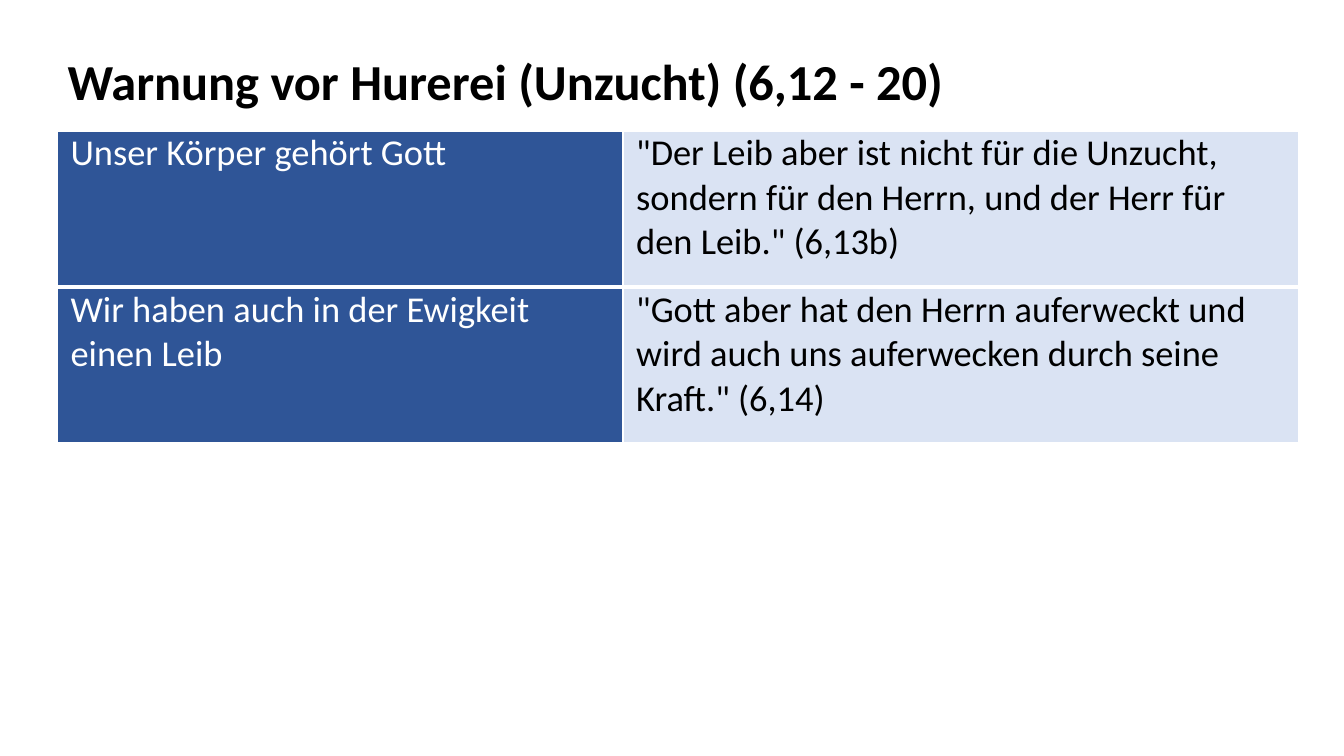
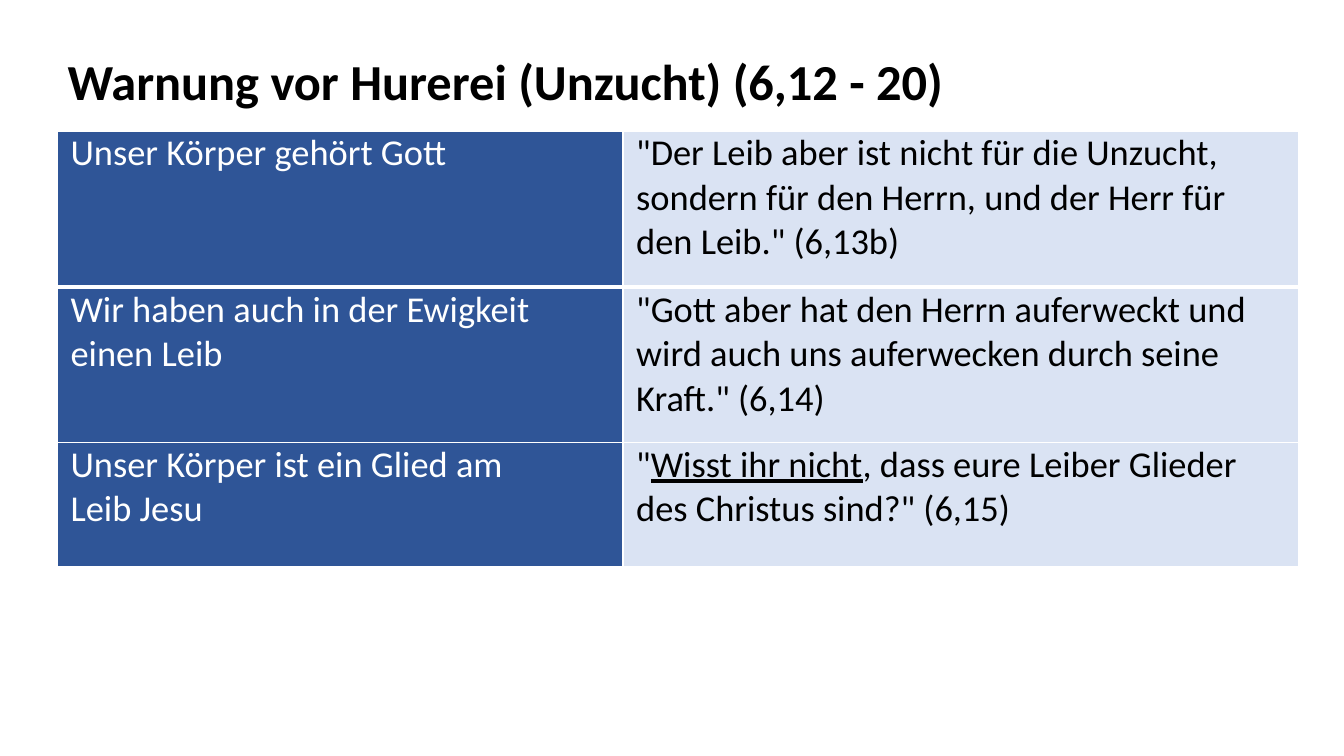
from lxml import etree
from pptx import Presentation
from pptx.dml.color import RGBColor
from pptx.enum.text import MSO_ANCHOR, MSO_AUTO_SIZE, PP_ALIGN
from pptx.oxml.ns import qn
from pptx.util import Inches, Pt

FONT = "Calibri"
BLACK, WHITE, DARK_BLUE, PALE_BLUE = "000000", "FFFFFF", "2F5597", "DAE3F3"
TITLE = "Warnung vor Hurerei (Unzucht) (6,12 - 20)"
LEFT = 0.57
COLUMN_WIDTHS = [5.61, 6.7]
COLUMN_COLORS = [(DARK_BLUE, WHITE), (PALE_BLUE, BLACK)]  # fill, text

# Row height, statement, verse; underscores enclose underlined words
ROWS = [
    (1.55, "Unser Körper gehört Gott",
     '"Der Leib aber ist nicht für die Unzucht, sondern für den Herrn, '
     'und der Herr für den Leib." (6,13b)'),
    (1.54, "Wir haben auch in der Ewigkeit einen Leib",
     '"Gott aber hat den Herrn auferweckt und wird auch uns auferwecken '
     'durch seine Kraft." (6,14)'),
    (1.23, "Unser Körper ist ein Glied am\nLeib Jesu",
     '"_Wisst ihr nicht_, dass eure Leiber Glieder des Christus sind?" (6,15)'),
]


def color(hex_string):
    return RGBColor.from_string(hex_string)


def add_borders(cell, bottom_width):
    """Draw white cell borders, 1 pt wide except at the bottom."""
    properties = cell._tc.get_or_add_tcPr()
    widths = {"a:lnL": 1, "a:lnR": 1, "a:lnT": 1, "a:lnB": bottom_width}
    for position, (side, width) in enumerate(widths.items()):
        line = etree.Element(qn(side), w=str(Pt(width)))
        fill = etree.SubElement(line, qn("a:solidFill"))
        etree.SubElement(fill, qn("a:srgbClr"), val=WHITE)
        properties.insert(position, line)


deck = Presentation()
deck.slide_width, deck.slide_height = Inches(13.33), Inches(7.5)

# Each slide reveals one more row
for row_count in (2, 3):
    rows = ROWS[:row_count]
    page = deck.slides.add_slide(deck.slide_layouts[5])

    # Title
    title = page.shapes.title
    title.left, title.top = Inches(LEFT), Inches(0.45)
    title.width, title.height = Inches(8.98), Inches(0.71)
    frame = title.text_frame
    frame.text = TITLE
    frame.word_wrap = False
    frame.auto_size = MSO_AUTO_SIZE.SHAPE_TO_FIT_TEXT
    frame.vertical_anchor = MSO_ANCHOR.TOP
    para = frame.paragraphs[0]
    para.alignment = PP_ALIGN.LEFT
    para.font.name, para.font.size, para.font.bold = FONT, Pt(36), True
    para.font.color.rgb = color(BLACK)

    # Table of statements and verses
    table = page.shapes.add_table(
        row_count, len(COLUMN_WIDTHS), Inches(LEFT), Inches(1.3),
        Inches(sum(COLUMN_WIDTHS)), Inches(sum(row[0] for row in rows))).table
    table.first_row = table.horz_banding = False
    for column, width in zip(table.columns, COLUMN_WIDTHS):
        column.width = Inches(width)

    for row_index, (height, *texts) in enumerate(rows):
        table.rows[row_index].height = Inches(height)
        for column_index, text in enumerate(texts):
            fill_color, text_color = COLUMN_COLORS[column_index]
            cell = table.cell(row_index, column_index)
            cell.margin_left = cell.margin_right = Inches(0.13)
            cell.margin_top = cell.margin_bottom = 0
            cell.fill.solid()
            cell.fill.fore_color.rgb = color(fill_color)
            add_borders(cell, bottom_width=3 if row_index == 0 else 1)

            # Cell text
            for line_index, line_text in enumerate(text.split("\n")):
                frame = cell.text_frame
                para = frame.add_paragraph() if line_index else frame.paragraphs[0]
                para.font.name, para.font.size = FONT, Pt(26)
                para.font.color.rgb = color(text_color)
                for part_index, part in enumerate(line_text.split("_")):
                    span = para.add_run()
                    span.text = part
                    if part_index % 2:
                        span.font.underline = True

deck.save("out.pptx")
